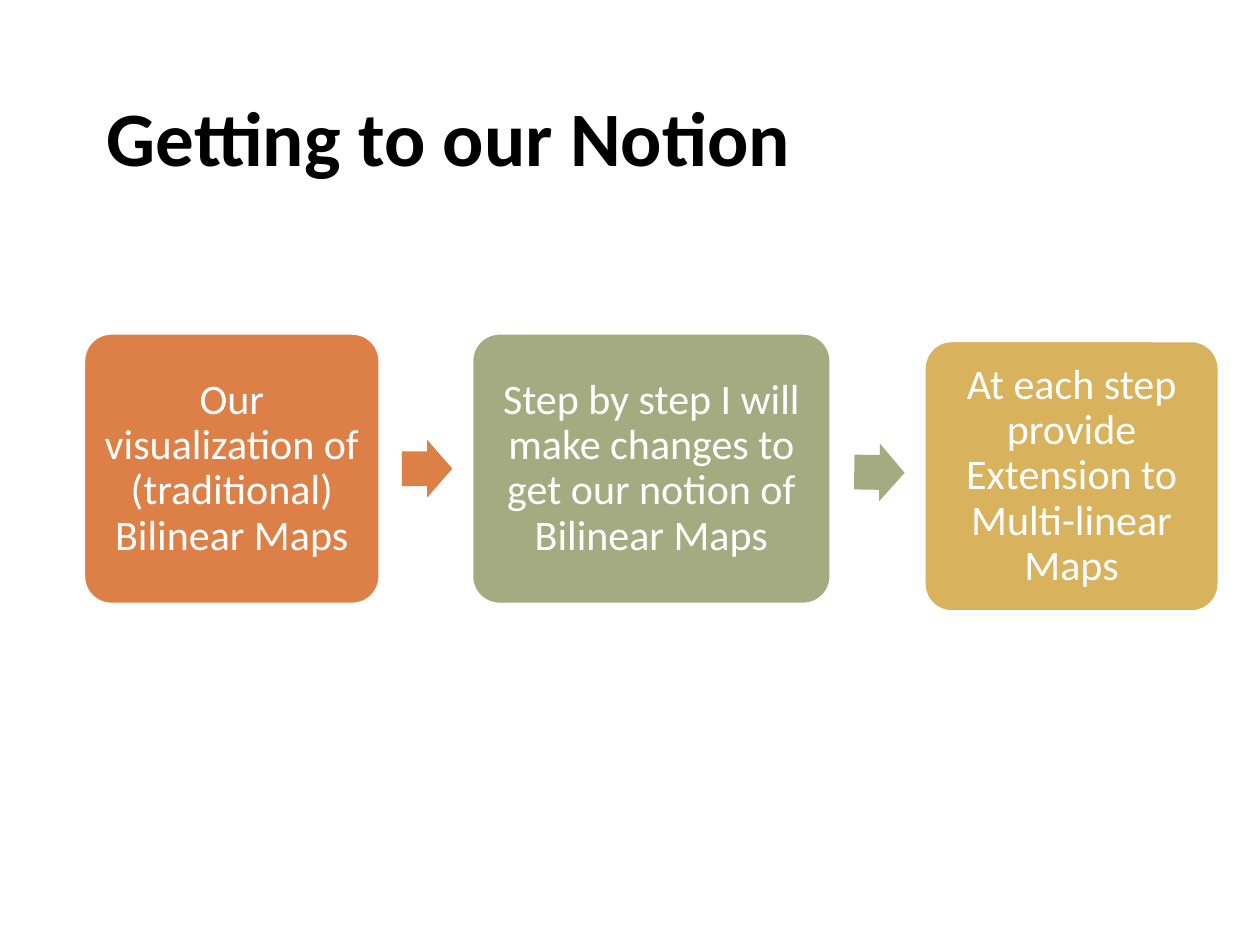
"""Build a slide with three process steps joined by block arrows."""
from pptx import Presentation
from pptx.dml.color import RGBColor
from pptx.enum.shapes import MSO_SHAPE
from pptx.enum.text import MSO_ANCHOR, PP_ALIGN
from pptx.util import Inches, Pt

BOX, ARROW = MSO_SHAPE.ROUNDED_RECTANGLE, MSO_SHAPE.RIGHT_ARROW
MIDDLE = MSO_ANCHOR.MIDDLE
LEFT, CENTER = PP_ALIGN.LEFT, PP_ALIGN.CENTER
BLACK = RGBColor(0x00, 0x00, 0x00)
WHITE = RGBColor(0xFF, 0xFF, 0xFF)
ORANGE = RGBColor(0xDD, 0x80, 0x47)
GREEN = RGBColor(0xA5, 0xAB, 0x81)
GOLD = RGBColor(0xD8, 0xB2, 0x5C)


def write(shape, text, size=24, color=WHITE, bold=False, align=CENTER, inset=0.1):
    frame = shape.text_frame
    frame.word_wrap = True
    frame.vertical_anchor = MIDDLE
    frame.margin_left = frame.margin_right = Inches(0.1)
    frame.margin_top = frame.margin_bottom = Inches(inset)
    para = frame.paragraphs[0]
    para.alignment = align
    para.line_spacing = 0.9
    run = para.add_run()
    run.text = text
    font = run.font
    font.name, font.size, font.bold = "Calibri", Pt(size), bold
    font.color.rgb = color


def draw(kind, left, top, width, height, color):
    shape = shapes.add_shape(kind, Inches(left), Inches(top), Inches(width), Inches(height))
    shape.shadow.inherit = False
    shape.fill.solid()
    shape.fill.fore_color.rgb = color
    return shape


deck = Presentation()
deck.slide_width, deck.slide_height = Inches(10), Inches(7.5)
shapes = deck.slides.add_slide(deck.slide_layouts[6]).shapes

title = shapes.add_textbox(Inches(0.75), Inches(0.4), Inches(8.5), Inches(1.45))
write(title, "Getting to our Notion", size=44, color=BLACK, bold=True, align=LEFT, inset=0.05)

steps = [
    (0.67, 2.65, 2.34, ORANGE, "Our visualization of (traditional) Bilinear Maps"),
    (3.75, 2.65, 2.84, GREEN, "Step by step I will make changes to get our notion of Bilinear Maps"),
    (7.34, 2.71, 2.33, GOLD, "At each step provide Extension to Multi-linear Maps"),
]
for left, top, width, color, text in steps:
    box = draw(BOX, left, top, width, 2.14, color)
    box.adjustments[0] = 0.1
    box.line.color.rgb = WHITE
    box.line.width = Pt(1)
    write(box, text)

for left, top, angle, color in [(3.19, 3.49, 0, ORANGE), (6.78, 3.52, 0.9, GREEN)]:
    arrow = draw(ARROW, left, top, 0.4, 0.46, color)
    arrow.adjustments[0] = 0.6
    arrow.adjustments[1] = 0.5
    arrow.rotation = angle
    arrow.line.fill.background()

deck.save("out.pptx")
